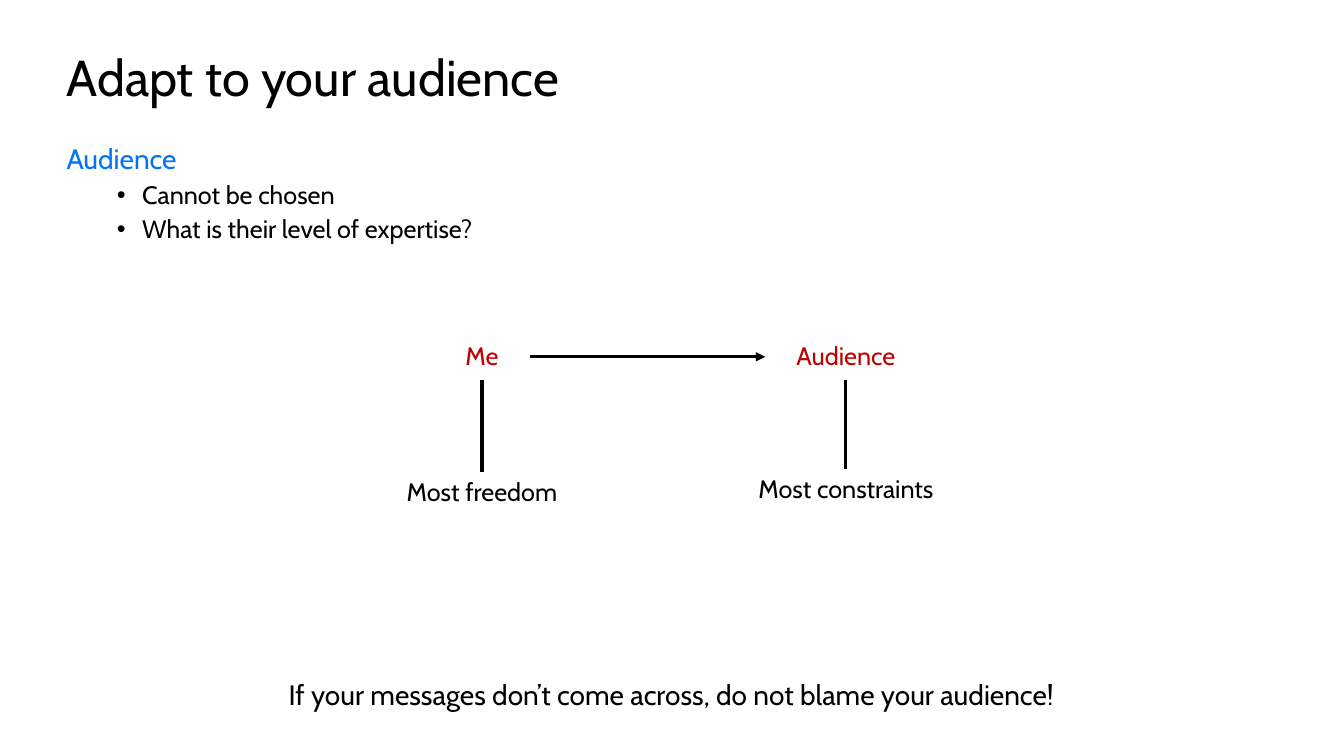
from dataclasses import dataclass

from lxml.etree import SubElement
from pptx import Presentation
from pptx.dml.color import RGBColor
from pptx.enum.shapes import MSO_CONNECTOR
from pptx.enum.text import MSO_ANCHOR, MSO_AUTO_SIZE, PP_ALIGN
from pptx.oxml.ns import qn
from pptx.util import Inches, Pt


@dataclass(frozen=True)
class Theme:
    """Colours, font and type sizes of the slide."""
    font: str = "Cabin"
    ink: str = "000000"
    heading: str = "0075F6"
    accent: str = "C00000"
    title_size: int = 36
    lead_size: int = 20
    text_size: int = 18
    line_width: float = 2.25


THEME = Theme()


def write(paragraph, text, *, size=THEME.text_size, color=THEME.ink,
          align=PP_ALIGN.LEFT, line_spacing=1.0, before=0):
    """Put formatted text into a paragraph."""
    paragraph.alignment = align
    paragraph.line_spacing = line_spacing
    paragraph.space_before = Pt(before)
    run = paragraph.add_run()
    run.text = text
    run.font.name = THEME.font
    run.font.size = Pt(size)
    run.font.color.rgb = RGBColor.from_string(color)


def place(region, box, anchor=MSO_ANCHOR.TOP, wrap=True):
    """Move a text region to its box and return its text frame."""
    region.left, region.top, region.width, region.height = map(Inches, box)
    frame = region.text_frame
    frame.auto_size = MSO_AUTO_SIZE.NONE
    frame.word_wrap = wrap
    frame.vertical_anchor = anchor
    return frame


def set_bullet(paragraph, char=None, margin=0, indent=0):
    """Set the bullet and indents of a paragraph, or remove its bullet."""
    properties = paragraph._p.get_or_add_pPr()
    properties.set("marL", str(Inches(margin)))
    properties.set("indent", str(Inches(indent)))
    if char:
        SubElement(properties, qn("a:buFont"), typeface="Arial")
        SubElement(properties, qn("a:buChar"), char=char)
    else:
        SubElement(properties, qn("a:buNone"))


def add_title(slide, box, text):
    """Fill the title placeholder."""
    frame = place(slide.shapes.title, box, MSO_ANCHOR.MIDDLE)
    write(frame.paragraphs[0], text, size=THEME.title_size, line_spacing=0.9)


def add_points(slide, box, heading, points):
    """Fill the body placeholder with a heading and its bullets."""
    frame = place(slide.placeholders[1], box)
    lead = frame.paragraphs[0]
    write(lead, heading, size=THEME.lead_size, color=THEME.heading,
          line_spacing=0.9, before=10)
    set_bullet(lead)
    for point in points:
        item = frame.add_paragraph()
        item.level = 1
        write(item, point, line_spacing=0.9, before=5)
        set_bullet(item, "•", 0.75, -0.25)


def add_label(group, box, text, color=THEME.ink):
    """Add a one-line centred label to the diagram."""
    label = group.shapes.add_textbox(*map(Inches, box))
    frame = place(label, box, wrap=False)
    write(frame.paragraphs[0], text, color=color, align=PP_ALIGN.CENTER)
    return label


def add_line(group, start=(0, 0), end=(0, 0)):
    """Add a plain straight connector to the diagram."""
    line = group.shapes.add_connector(
        MSO_CONNECTOR.STRAIGHT, *map(Inches, (*start, *end)))
    line.line.color.rgb = RGBColor.from_string(THEME.ink)
    line.line.width = Pt(THEME.line_width)
    SubElement(line._element.spPr, qn("a:effectLst"))
    return line


def add_diagram(slide, box, roles):
    """Draw each role above its trait, with an arrow between the roles."""
    left, top, width, height = box
    group = slide.shapes.add_group_shape()
    role_height, trait_height = 0.44, 0.4
    for role, role_width, trait, trait_width, center, drop in roles:
        middle = left + center
        role_label = add_label(
            group, (middle - role_width / 2, top, role_width, role_height),
            role, THEME.accent)
        trait_top = top + height - trait_height + drop
        trait_label = add_label(
            group, (middle - trait_width / 2, trait_top, trait_width, trait_height),
            trait)
        stem = add_line(group, (middle, trait_top), (middle, top + role_height))
        stem.begin_connect(trait_label, 0)
        stem.end_connect(role_label, 2)
    arrow_y = top + 0.21
    arrow = add_line(group, (left + 1.37, arrow_y), (left + width - 1.86, arrow_y))
    SubElement(arrow.line._get_or_add_ln(), qn("a:tailEnd"), type="triangle")


def add_takeaway(slide, box, text):
    """Add the closing message at the foot of the slide."""
    takeaway = slide.shapes.add_textbox(*map(Inches, box))
    frame = place(takeaway, box, MSO_ANCHOR.BOTTOM)
    write(frame.paragraphs[0], text, size=THEME.lead_size,
          align=PP_ALIGN.CENTER, before=4)


def main():
    """Build and save the slide."""
    deck = Presentation()
    deck.slide_width, deck.slide_height = Inches(13.33), Inches(7.5)
    slide = deck.slides.add_slide(deck.slide_layouts[1])
    left, width = 0.56, 12.2
    add_title(slide, (left, 0.4, width, 0.79), "Adapt to your audience")
    add_points(slide, (left, 1.39, width, 1.5), "Audience",
               ["Cannot be chosen", "What is their level of expertise?"])
    add_takeaway(slide, (left, 6.19, width, 0.91),
                 "If your messages don’t come across, do not blame your audience!")
    add_diagram(slide, (3.89, 3.33, 5.56, 1.72), [
        ("Me", 0.54, "Most freedom", 1.79, 0.89, 0.03),
        ("Audience", 1.26, "Most constraints", 2.11, 4.5, 0),
    ])
    deck.save("out.pptx")


if __name__ == "__main__":
    main()
